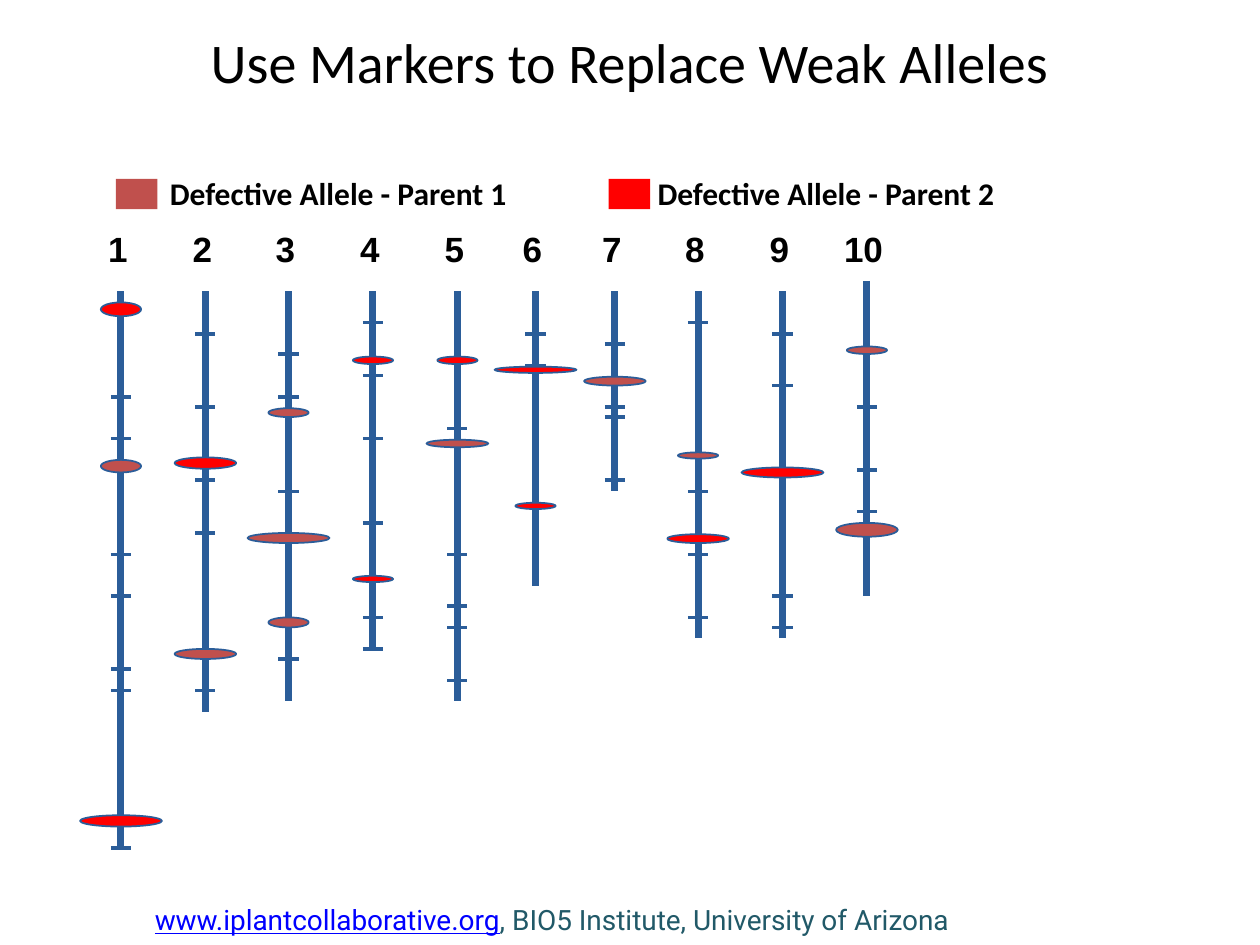
from pptx import Presentation
from pptx.dml.color import RGBColor
from pptx.enum.shapes import MSO_CONNECTOR, MSO_SHAPE
from pptx.enum.text import MSO_ANCHOR, MSO_AUTO_SIZE, PP_ALIGN
from pptx.oxml.ns import qn
from pptx.util import Inches, Pt

BLACK = RGBColor(0x00, 0x00, 0x00)
BLUE = RGBColor(0x2B, 0x5D, 0x99)
LINK = RGBColor(0x00, 0x00, 0xFF)
TEAL = RGBColor(0x21, 0x59, 0x68)
PARENT_1 = RGBColor(0xC0, 0x50, 0x4D)
PARENT_2 = RGBColor(0xFF, 0x00, 0x00)

TITLE = "Use Markers to Replace Weak Alleles"
SITE = "www.iplantcollaborative.org"
CREDIT = ", BIO5 Institute, University of Arizona"

# swatch left, label left, label width, label, colour
LEGEND = [
    (0.92, 1.25, 3.26, "Defective Allele - Parent 1", PARENT_1),
    (4.83, 5.12, 3.41, "Defective Allele - Parent 2", PARENT_2),
]

SMALL, MEDIUM, LARGE = 0.32, 0.49, 0.65  # allele widths
TICK_WIDTH = 0.16

# centre, top, bottom, marker heights, alleles (colour, top, width, height)
CHROMOSOMES = [
    (0.96, 2.31, 6.73, [3.15, 3.48, 4.40, 4.73, 5.31, 5.48, 6.73],
     [(PARENT_2, 2.40, SMALL, 0.11), (PARENT_1, 3.65, SMALL, 0.10),
      (PARENT_2, 6.47, LARGE, 0.09)]),
    (1.63, 2.31, 5.65, [2.65, 3.23, 3.81, 4.23, 5.48],
     [(PARENT_2, 3.63, MEDIUM, 0.09), (PARENT_1, 5.15, MEDIUM, 0.08)]),
    (2.29, 2.31, 5.56, [2.81, 3.15, 3.90, 5.23],
     [(PARENT_1, 3.24, SMALL, 0.07), (PARENT_1, 4.23, LARGE, 0.08),
      (PARENT_1, 4.90, SMALL, 0.08)]),
    (2.96, 2.31, 5.15, [2.56, 2.98, 3.48, 4.15, 4.90, 5.15],
     [(PARENT_2, 2.83, SMALL, 0.06), (PARENT_2, 4.57, SMALL, 0.05)]),
    (3.63, 2.31, 5.56, [3.40, 4.40, 4.81, 4.98, 5.40],
     [(PARENT_2, 2.83, SMALL, 0.06), (PARENT_1, 3.49, MEDIUM, 0.06)]),
    (4.25, 2.31, 4.65, [2.65, 2.90],
     [(PARENT_2, 2.91, LARGE, 0.05), (PARENT_2, 3.99, SMALL, 0.05)]),
    (4.88, 2.31, 3.90, [2.73, 3.23, 3.31, 3.81],
     [(PARENT_1, 2.99, MEDIUM, 0.07)]),
    (5.54, 2.31, 5.06, [2.56, 3.90, 4.40, 4.90],
     [(PARENT_1, 3.59, SMALL, 0.05), (PARENT_2, 4.24, MEDIUM, 0.07)]),
    (6.21, 2.31, 5.06, [2.65, 3.06, 4.73, 4.98],
     [(PARENT_2, 3.71, LARGE, 0.08)]),
    (6.88, 2.23, 4.73, [3.23, 3.73, 4.06],
     [(PARENT_1, 2.75, SMALL, 0.06), (PARENT_1, 4.15, MEDIUM, 0.11)]),
]


def add_text(slide, box, runs, size, font, bold=False, wrap=True,
             anchor=MSO_ANCHOR.TOP, align=PP_ALIGN.LEFT):
    """Add a one-paragraph text box; runs are (text, colour, underline)."""
    frame = slide.shapes.add_textbox(*map(Inches, box)).text_frame
    frame.word_wrap = wrap
    frame.auto_size = MSO_AUTO_SIZE.NONE
    frame.vertical_anchor = anchor
    paragraph = frame.paragraphs[0]
    paragraph.alignment = align
    for text, colour, underline in runs:
        run = paragraph.add_run()
        run.text = text
        run.font.size = Pt(size)
        run.font.name = font
        run.font.bold = bold
        run.font.underline = underline
        run.font.color.rgb = colour


def add_filled(slide, kind, box, colour, outlined):
    shape = slide.shapes.add_shape(kind, *map(Inches, box))
    shape.shadow.inherit = False
    shape.fill.solid()
    shape.fill.fore_color.rgb = colour
    if outlined:
        shape.line.color.rgb = BLUE
        shape.line.width = Pt(1)
    else:
        shape.line.fill.background()


def add_line(slide, ends, width):
    line = slide.shapes.add_connector(MSO_CONNECTOR.STRAIGHT, *map(Inches, ends))
    line.line.color.rgb = BLUE
    line.line.width = Pt(width)
    properties = line._element.spPr
    properties.append(properties.makeelement(qn("a:effectLst"), {}))


def add_chromosome(slide, number, centre, top, bottom, markers, alleles):
    label_width = 0.36 if number < 10 else 0.52
    add_text(slide, (centre - 0.02 - label_width / 2, 1.76, label_width, 0.44),
             [(str(number), BLACK, False)], 20, "Arial", bold=True, wrap=False)
    add_line(slide, (centre, top, centre, bottom), 4)
    for colour, allele_top, width, height in alleles:
        add_filled(slide, MSO_SHAPE.OVAL,
                   (centre - width / 2, allele_top, width, height), colour, True)
    for y in markers:
        add_line(slide, (centre - TICK_WIDTH / 2, y, centre + TICK_WIDTH / 2, y), 2)


def main():
    deck = Presentation()
    deck.slide_width, deck.slide_height = Inches(10), Inches(7.5)
    slide = deck.slides.add_slide(deck.slide_layouts[6])

    add_text(slide, (0, 0.07, 10, 0.83), [(TITLE, BLACK, False)], 32, "Calibri",
             anchor=MSO_ANCHOR.MIDDLE, align=PP_ALIGN.CENTER)
    for swatch_left, label_left, label_width, label, colour in LEGEND:
        add_filled(slide, MSO_SHAPE.RECTANGLE, (swatch_left, 1.42, 0.33, 0.24),
                   colour, False)
        add_text(slide, (label_left, 1.33, label_width, 0.4),
                 [(label, BLACK, False)], 18, "Calibri", bold=True)
    for number, chromosome in enumerate(CHROMOSOMES, 1):
        add_chromosome(slide, number, *chromosome)
    add_text(slide, (1.13, 7.1, 6.91, 0.4),
             [(SITE, LINK, True), (CREDIT, TEAL, False)], 16, "Roboto",
             anchor=MSO_ANCHOR.MIDDLE)

    deck.save("out.pptx")


if __name__ == "__main__":
    main()
